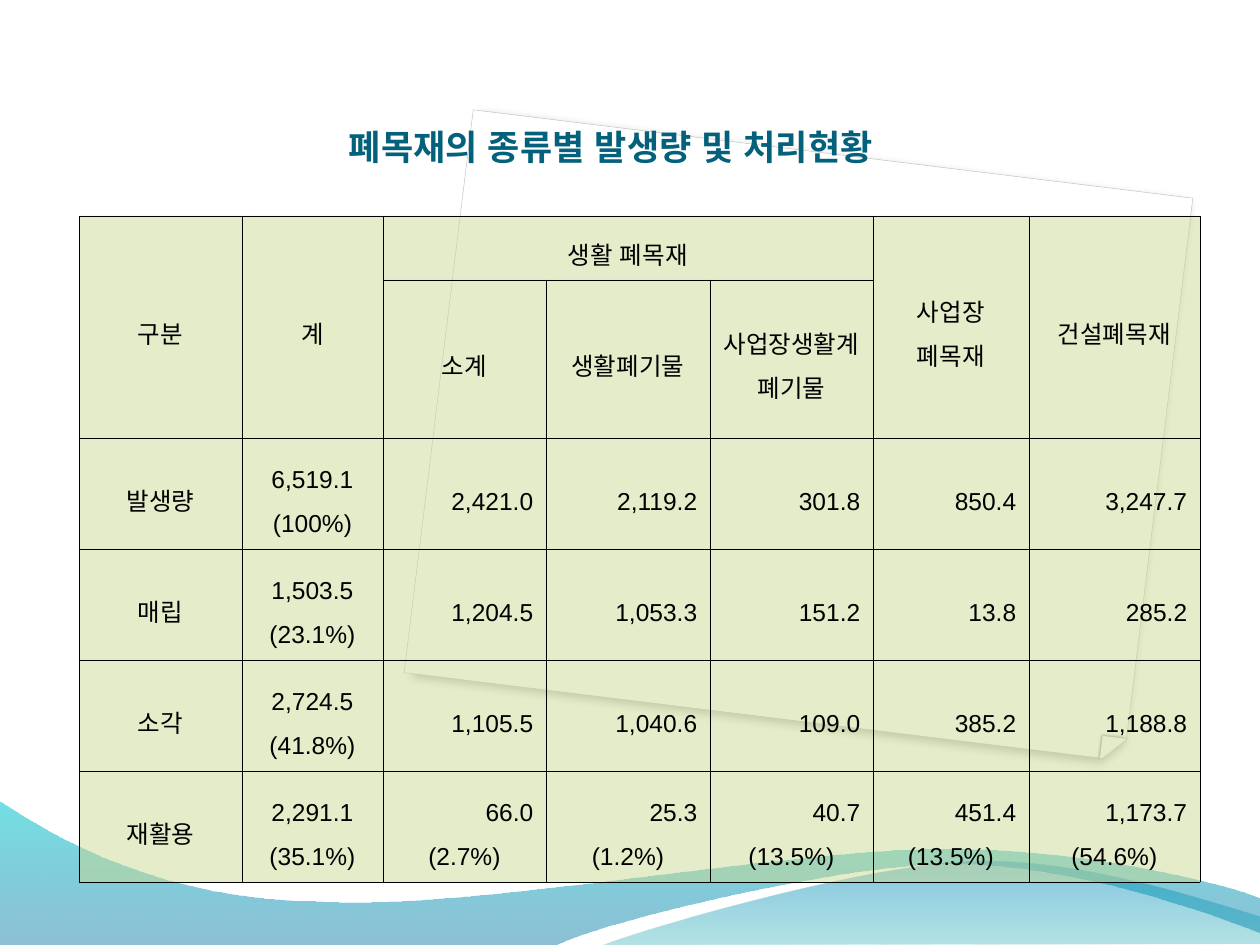
from dataclasses import dataclass
from typing import NamedTuple

from lxml.etree import SubElement
from pptx import Presentation
from pptx.dml.color import RGBColor
from pptx.enum.shapes import MSO_SHAPE as Preset
from pptx.enum.text import MSO_ANCHOR as Anchor, MSO_AUTO_SIZE as AutoSize, PP_ALIGN as Align
from pptx.oxml.ns import qn
from pptx.util import Emu, Pt

EMU_PER_PX = 914400 / 126
COLORS = {
    "paper": "FFFFFF", "edge": "C0C0C0", "ink": "000000", "title": "04617B",
    "cell": "C9DA92", "blue": "0074A1", "aqua": "00C6CF", "teal": "00A1A9", "sky": "008BBF",
}
COLUMNS = [163, 141, 163, 164, 163, 156, 171]
ROWS = [64, 158] + [111] * 4


class Box(NamedTuple):
    left: int
    top: int
    width: int
    height: int


class Stop(NamedTuple):
    color: str
    opacity: int
    position: float


class Header(NamedTuple):
    row: int
    col: int
    text: str
    rows: int = 1
    cols: int = 1


class Entry(NamedTuple):
    value: str
    share: str = ""


@dataclass
class Shadow:
    opacity: int
    blur: float
    distance: float
    angle: int
    width_scale: float = 100


@dataclass
class Sheet:
    preset: Preset
    box: Box
    edge: str
    edge_width: float
    shadow: Shadow
    adjustments: tuple = ()


@dataclass
class Wave:
    start: tuple
    segments: list
    stops: list


SHEETS = [
    Sheet(Preset.SNIP_ROUND_RECTANGLE, Box(436, 152, 725, 567), "edge", 0.25,
          Shadow(25, 5, 3, 125, 98.5), (0, 0.036)),
    Sheet(Preset.RIGHT_TRIANGLE, Box(1102, 738, 21, 21), "paper", 1,
          Shadow(47, 1.6, 0.5, 215)),
]
WAVES = [
    Wave((0, 945), [
        [(554, 945)],
        [(600, 922), (837, 864), (955, 864)],
        [(1075, 864), (1207, 912), (1260, 932)],
        [(1261, 898)],
        [(1239, 888), (1096, 848), (940, 849)],
        [(784, 849), (481, 908), (324, 901)],
        [(163, 900), (58, 839), (-1, 801)],
        [(0, 945)],
    ], [Stop("blue", 45, 0), Stop("aqua", 55, 1)]),
    Wave((604, 945), [
        [(641, 930), (859, 866), (969, 862)],
        [(1079, 857), (1211, 903), (1260, 917)],
        [(1260, 944)],
        [(604, 945)],
    ], [Stop("teal", 30, 0), Stop("sky", 45, 0.8)]),
]
HEADERS = [
    Header(0, 0, "구분", rows=2), Header(0, 1, "계", rows=2),
    Header(0, 2, "생활 폐목재", cols=3),
    Header(0, 5, "사업장 폐목재", rows=2), Header(0, 6, "건설폐목재", rows=2),
    Header(1, 2, "소계"), Header(1, 3, "생활폐기물"), Header(1, 4, "사업장생활계폐기물"),
]
BODY = {
    "발생량": [Entry("6,519.1", "(100%)"), Entry("2,421.0"), Entry("2,119.2"),
            Entry("301.8"), Entry("850.4"), Entry("3,247.7")],
    "매립": [Entry("1,503.5", "(23.1%)"), Entry("1,204.5"), Entry("1,053.3"),
           Entry("151.2"), Entry("13.8"), Entry("285.2")],
    "소각": [Entry("2,724.5", "(41.8%)"), Entry("1,105.5"), Entry("1,040.6"),
           Entry("109.0"), Entry("385.2"), Entry("1,188.8")],
    "재활용": [Entry("2,291.1", "(35.1%)"), Entry("66.0", "(2.7%)"), Entry("25.3", "(1.2%)"),
            Entry("40.7", "(13.5%)"), Entry("451.4", "(13.5%)"), Entry("1,173.7", "(54.6%)")],
}


def px(length: int) -> Emu:
    return Emu(round(length * EMU_PER_PX))


def rgb(name: str) -> RGBColor:
    return RGBColor.from_string(COLORS[name])


def set_opacity(color, percent: int) -> None:
    SubElement(color, qn("a:alpha"), val=str(percent * 1000))


def add_span(para, text: str, font: str, size: int, color: str, bold: bool = False) -> None:
    span = para.add_run()
    span.text = text
    span.font.name = font
    span.font.size = Pt(size)
    span.font.bold = bold
    span.font.color.rgb = rgb(color)
    SubElement(span.font._element, qn("a:ea"), typeface="Arial")


def draw_sheet(page, sheet: Sheet) -> None:
    shape = page.shapes.add_shape(sheet.preset, *map(px, sheet.box))
    for index, value in enumerate(sheet.adjustments):
        shape.adjustments[index] = value
    shape.rotation = 7
    shape._element.spPr.find(qn("a:xfrm")).set("flipV", "1")
    shape.fill.solid()
    shape.fill.fore_color.rgb = rgb("paper")
    shape.line.color.rgb = rgb(sheet.edge)
    shape.line.width = Pt(sheet.edge_width)
    shape.shadow.inherit = False
    shadow = sheet.shadow
    effects = shape._element.spPr.find(qn("a:effectLst"))
    outer = SubElement(effects, qn("a:outerShdw"), blurRad=str(Pt(shadow.blur)),
                       dist=str(Pt(shadow.distance)), dir=str(shadow.angle * 60000),
                       sx=str(round(shadow.width_scale * 1000)), algn="tl", rotWithShape="0")
    set_opacity(SubElement(outer, qn("a:srgbClr"), val=COLORS["ink"]), shadow.opacity)


def bend_segments(shape, segments: list) -> None:
    lines = iter(list(shape._element.spPr.iter(qn("a:lnTo"))))
    for controls in segments:
        first, *others = [next(lines) for _ in controls]
        if others:
            curve = first.makeelement(qn("a:cubicBezTo"))
            first.addprevious(curve)
            for line in (first, *others):
                curve.append(line[0])
                line.getparent().remove(line)


def draw_wave(page, wave: Wave) -> None:
    builder = page.shapes.build_freeform(*map(px, wave.start))
    corners = [(px(x), px(y)) for controls in wave.segments for x, y in controls]
    builder.add_line_segments(corners, close=True)
    shape = builder.convert_to_shape()
    bend_segments(shape, wave.segments)
    shape.shadow.inherit = False
    shape.line.fill.background()
    shape.fill.gradient()
    shape.fill.gradient_angle = 90
    for target, stop in zip(shape.fill.gradient_stops, wave.stops):
        target.color.rgb = rgb(stop.color)
        target.position = stop.position
    for color, stop in zip(shape._element.spPr.iter(qn("a:srgbClr")), wave.stops):
        set_opacity(color, stop.opacity)


def write_title(page, text: str, box: Box) -> None:
    title = page.shapes.title
    title._element.getparent().append(title._element)
    title.left, title.top, title.width, title.height = map(px, box)
    frame = title.text_frame
    frame.auto_size = AutoSize.NONE
    frame.word_wrap = True
    frame.vertical_anchor = Anchor.BOTTOM
    frame.margin_left = frame.margin_right = frame.margin_top = frame.margin_bottom = px(6)
    para = frame.paragraphs[0]
    para.alignment = Align.CENTER
    add_span(para, text, "Calibri", 20, "title", bold=True)


def style_cell(cell) -> None:
    cell.vertical_anchor = Anchor.MIDDLE
    cell.fill.solid()
    cell.fill.fore_color.rgb = rgb("cell")
    properties = cell._tc.get_or_add_tcPr()
    set_opacity(next(properties.iter(qn("a:srgbClr"))), 49)
    for index, side in enumerate(("lnL", "lnR", "lnT", "lnB")):
        border = SubElement(properties, qn(f"a:{side}"), w=str(Pt(0.28)))
        fill = SubElement(border, qn("a:solidFill"))
        SubElement(fill, qn("a:srgbClr"), val=COLORS["ink"])
        properties.insert(index, border)


def write_cell(cell, lines: list) -> None:
    frame = cell.text_frame
    for index, (text, align) in enumerate(lines):
        para = frame.add_paragraph() if index else frame.paragraphs[0]
        para.alignment = align
        para.line_spacing = 1.6
        add_span(para, text, "Arial", 14, "ink")


def draw_table(page, left: int, top: int) -> None:
    box = Box(left, top, sum(COLUMNS), sum(ROWS))
    table = page.shapes.add_table(len(ROWS), len(COLUMNS), *map(px, box)).table
    table.first_row = table.horz_banding = False
    for column, width in zip(table.columns, COLUMNS):
        column.width = px(width)
    for row, height in zip(table.rows, ROWS):
        row.height = px(height)
    for cell in table.iter_cells():
        style_cell(cell)
    for header in HEADERS:
        cell = table.cell(header.row, header.col)
        if header.rows * header.cols > 1:
            cell.merge(table.cell(header.row + header.rows - 1, header.col + header.cols - 1))
        write_cell(cell, [(header.text, Align.CENTER)])
    for row, (label, entries) in enumerate(BODY.items(), start=2):
        write_cell(table.cell(row, 0), [(label, Align.CENTER)])
        for col, entry in enumerate(entries, start=1):
            lines = [(entry.value, Align.CENTER if col == 1 else Align.RIGHT)]
            if entry.share:
                lines.append((entry.share, Align.CENTER))
            write_cell(table.cell(row, col), lines)


def main() -> None:
    deck = Presentation()
    deck.slide_width, deck.slide_height = px(1260), px(945)
    page = deck.slides.add_slide(deck.slide_layouts[5])
    for sheet in SHEETS:
        draw_sheet(page, sheet)
    for wave in WAVES:
        draw_wave(page, wave)
    write_title(page, "폐목재의 종류별 발생량 및 처리현황", Box(233, 96, 756, 78))
    draw_table(page, 79, 216)
    deck.save("out.pptx")


if __name__ == "__main__":
    main()
